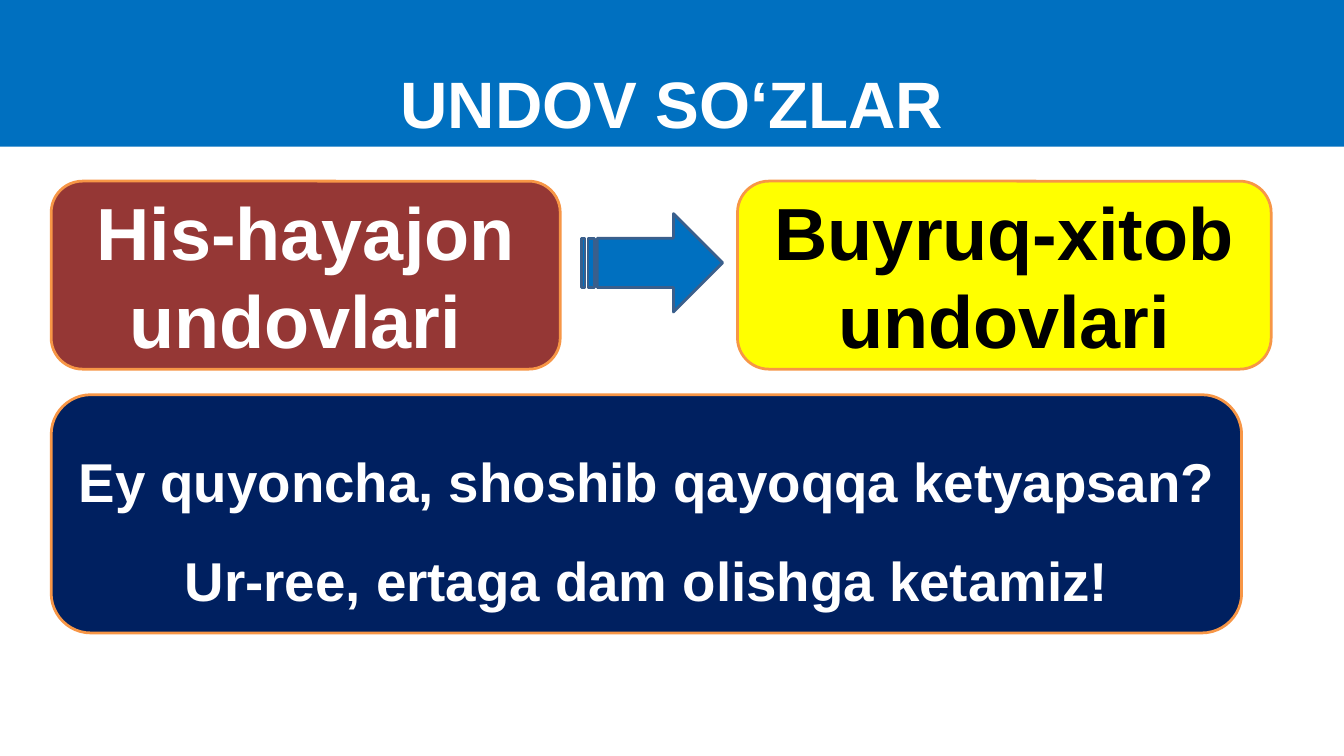
from pptx import Presentation
from pptx.dml.color import RGBColor
from pptx.enum.shapes import MSO_SHAPE
from pptx.enum.text import MSO_ANCHOR, MSO_AUTO_SIZE, PP_ALIGN
from pptx.util import Inches, Pt

WHITE = RGBColor(0xFF, 0xFF, 0xFF)
BLACK = RGBColor(0x00, 0x00, 0x00)
BLUE = RGBColor(0x00, 0x70, 0xC0)
STEEL = RGBColor(0x3A, 0x5F, 0x8C)
YELLOW = RGBColor(0xFF, 0xFF, 0x00)
BROWN = RGBColor(0x95, 0x37, 0x35)
NAVY = RGBColor(0x00, 0x20, 0x60)
ORANGE = RGBColor(0xF7, 0x96, 0x46)

SLIDE_WIDTH, SLIDE_HEIGHT = 13.65, 7.68
LEFT_MARGIN = 0.52
CARD_TOP, CARD_HEIGHT = 1.84, 1.91


class SlideBuilder:
    """Holds the current slide and its shared font and outline width."""

    font_name = "Arial"
    line_width = Pt(2)

    def __init__(self, slide):
        self.slide = slide

    def set_text(self, shape, text, size, color, line_spacing=1.0):
        frame = shape.text_frame
        frame.text = text
        frame.word_wrap = True
        frame.vertical_anchor = MSO_ANCHOR.MIDDLE
        for paragraph in frame.paragraphs:
            paragraph.alignment = PP_ALIGN.CENTER
            paragraph.line_spacing = line_spacing
            for run in paragraph.runs:
                run.font.name = self.font_name
                run.font.size = Pt(size)
                run.font.bold = True
                run.font.color.rgb = color

    def title_banner(self, text, height):
        title = self.slide.shapes.title
        title.left, title.top = Inches(0), Inches(0)
        title.width, title.height = Inches(SLIDE_WIDTH), Inches(height)
        title.fill.solid()
        title.fill.fore_color.rgb = BLUE
        self.set_text(title, text, 48, WHITE)
        title.text_frame.auto_size = MSO_AUTO_SIZE.NONE
        title.text_frame.vertical_anchor = MSO_ANCHOR.BOTTOM
        title.text_frame.margin_bottom = Inches(0.05)

    def block(self, kind, left, top, width, height, fill, line):
        shape = self.slide.shapes.add_shape(
            kind, Inches(left), Inches(top), Inches(width), Inches(height))
        shape.shadow.inherit = False
        shape.fill.solid()
        shape.fill.fore_color.rgb = fill
        shape.line.color.rgb = line
        shape.line.width = self.line_width
        return shape

    def card(self, text, left, top, width, height, fill, color,
             size=54, line_spacing=1.0):
        shape = self.block(MSO_SHAPE.ROUNDED_RECTANGLE,
                           left, top, width, height, fill, ORANGE)
        self.set_text(shape, text, size, color, line_spacing)

    def arrow(self, left, top, width, height):
        self.block(MSO_SHAPE.STRIPED_RIGHT_ARROW,
                   left, top, width, height, BLUE, STEEL)


def main():
    presentation = Presentation()
    presentation.slide_width = Inches(SLIDE_WIDTH)
    presentation.slide_height = Inches(SLIDE_HEIGHT)
    title_only = presentation.slide_layouts[5]
    builder = SlideBuilder(presentation.slides.add_slide(title_only))

    builder.title_banner("UNDOV SO‘ZLAR", 1.49)
    builder.arrow(5.91, 2.17, 1.43, 1)
    builder.card("Buyruq-xitob undovlari",
                 7.49, CARD_TOP, 5.42, CARD_HEIGHT, YELLOW, BLACK)
    builder.card("His-hayajon\nundovlari ",
                 LEFT_MARGIN, CARD_TOP, 5.17, CARD_HEIGHT, BROWN, WHITE)
    builder.card("Ey quyoncha, shoshib qayoqqa ketyapsan?\n"
                 "Ur-ree, ertaga dam olishga ketamiz!",
                 LEFT_MARGIN, 4.01, 12.09, 2.42, NAVY, WHITE,
                 size=40, line_spacing=1.5)

    presentation.save("out.pptx")


if __name__ == "__main__":
    main()
